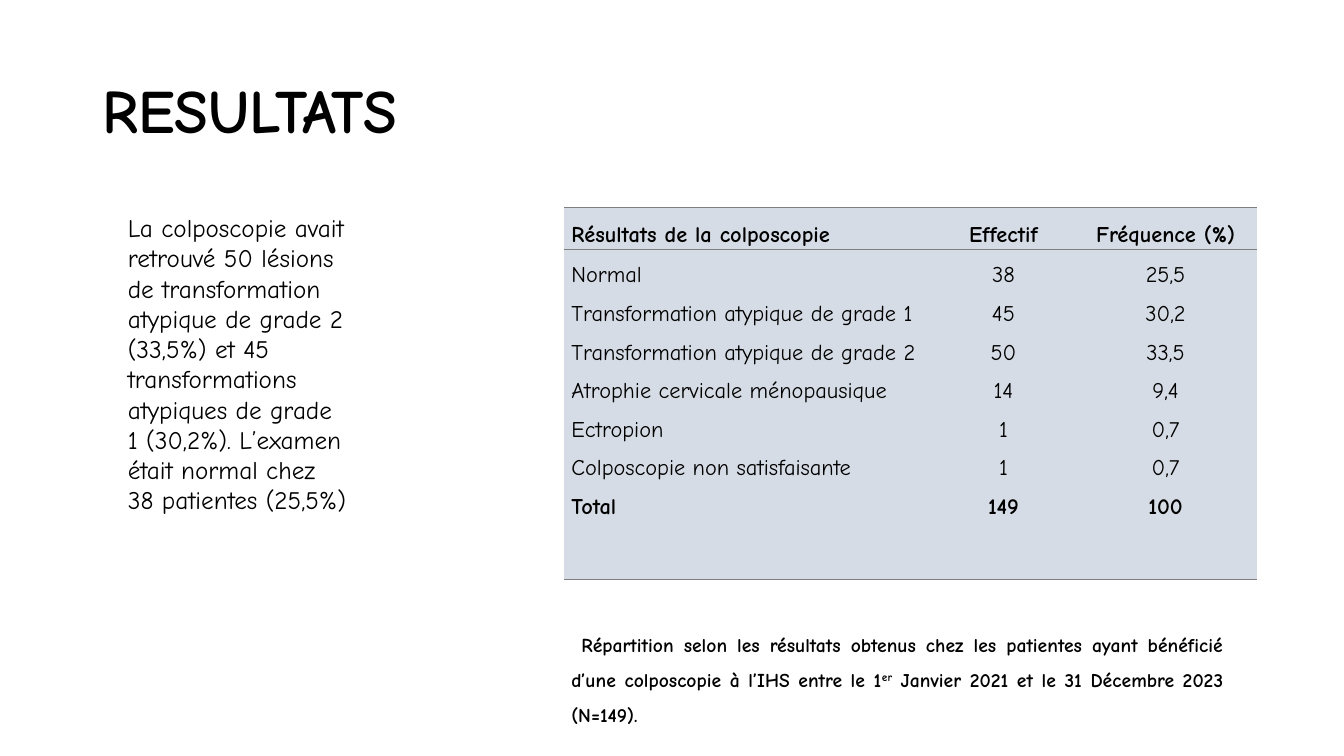
from dataclasses import dataclass

from lxml import etree
from pptx import Presentation
from pptx.dml.color import RGBColor
from pptx.enum import text as t
from pptx.oxml import ns
from pptx.util import Pt


@dataclass(frozen=True)
class Theme:
    font: str = "Comic Neue"
    ink: str = "000000"
    fill: str = "D6DCE5"
    rule: str = "7F7F7F"
    title: int = 44
    body: int = 18
    table: int = 16
    caption: int = 14


THEME = Theme()
LEFT, CENTER, JUSTIFY = t.PP_ALIGN.LEFT, t.PP_ALIGN.CENTER, t.PP_ALIGN.JUSTIFY

HEADERS = ["Résultats de la colposcopie", "Effectif", "Fréquence (%)"]
RESULTS = [
    ("Normal", "38", "25,5"),
    ("Transformation atypique de grade 1", "45", "30,2"),
    ("Transformation atypique de grade 2", "50", "33,5"),
    ("Atrophie cervicale ménopausique", "14", "9,4"),
    ("Ectropion", "1", "0,7"),
    ("Colposcopie non satisfaisante", "1", "0,7"),
    ("Total", "149", "100"),
]
SUMMARY = (
    "La colposcopie avait retrouvé 50 lésions de transformation atypique de "
    "grade 2 (33,5%) et 45 transformations atypiques de grade 1 (30,2%). "
    "L’examen était normal chez 38 patientes (25,5%)"
)
CAPTION = [
    " Répartition selon les résultats obtenus chez les patientes ayant "
    "bénéficié d’une colposcopie à l’IHS entre le 1",
    "er",
    " Janvier 2021 et le 31 Décembre 2023 (N=149).",
]


def write(p, content, *, size, bold=False, align=LEFT, spacing=1.0, raised=False):
    """Add one run to a paragraph and format both."""
    p.alignment, p.line_spacing = align, spacing
    r = p.add_run()
    r.text = content
    r.font.name, r.font.size, r.font.bold = THEME.font, Pt(size), bold
    r.font.color.rgb = RGBColor.from_string(THEME.ink)
    if raised:
        r._r.get_or_add_rPr().set("baseline", "30000")


def place(sp, box):
    sp.left, sp.top, sp.width, sp.height = (Pt(v) for v in box)


def add_title(s, box):
    sp = s.shapes.title
    place(sp, box)
    tf = sp.text_frame
    tf.auto_size = t.MSO_AUTO_SIZE.NONE
    tf.vertical_anchor = t.MSO_ANCHOR.MIDDLE
    write(tf.paragraphs[0], "RESULTATS", size=THEME.title, bold=True, spacing=0.9)


def add_text(s, box, runs, **fmt):
    """Add a wrapped text box; every second run is raised."""
    tf = s.shapes.add_textbox(*(Pt(v) for v in box)).text_frame
    tf.word_wrap = True
    for i, content in enumerate(runs):
        write(tf.paragraphs[0], content, raised=i % 2 == 1, **fmt)


def set_borders(cell):
    """Rule the top and bottom of a cell and leave its sides open."""
    tc_pr = cell._tc.get_or_add_tcPr()
    for side in "LRTB":
        ln = etree.SubElement(tc_pr, ns.qn(f"a:ln{side}"), w=str(Pt(1)))
        if side in "LR":
            etree.SubElement(ln, ns.qn("a:noFill"))
        else:
            solid = etree.SubElement(ln, ns.qn("a:solidFill"))
            etree.SubElement(solid, ns.qn("a:srgbClr"), val=THEME.rule)


def fill_cell(cell, lines, align, bold_line):
    set_borders(cell)
    cell.fill.solid()
    cell.fill.fore_color.rgb = RGBColor.from_string(THEME.fill)
    cell.margin_left = cell.margin_right = Pt(5)
    cell.margin_top = cell.margin_bottom = 0
    tf = cell.text_frame
    for i, line in enumerate(lines):
        p = tf.add_paragraph() if i else tf.paragraphs[0]
        write(p, line, size=THEME.table, bold=i == bold_line, align=align, spacing=1.5)


def add_results_table(s, box):
    """Add a header row above one tall row that lists each column's values."""
    x, y, w, h = box
    header_h = 30.2
    tbl = s.shapes.add_table(2, 3, Pt(x), Pt(y), Pt(w), Pt(h)).table
    tbl.first_row = tbl.horz_banding = False
    for row, height in zip(tbl.rows, (header_h, h - header_h)):
        row.height = Pt(height)
    shares = (0.532, 0.203, 0.265)
    for c, (header, values) in enumerate(zip(HEADERS, zip(*RESULTS))):
        tbl.columns[c].width = Pt(w * shares[c])
        align = CENTER if c else JUSTIFY
        fill_cell(tbl.cell(0, c), [header], align, 0)
        tbl.cell(0, c).vertical_anchor = t.MSO_ANCHOR.MIDDLE
        fill_cell(tbl.cell(1, c), values, align, len(values) - 1)


def build_results_slide(prs):
    s = prs.slides.add_slide(prs.slide_layouts.get_by_name("Title Only"))
    add_title(s, (66, 28.8, 828, 104.4))
    add_results_table(s, (403.2, 148.3, 495, 265.7))
    add_text(s, (401, 440, 480.2, 83.5), CAPTION,
             size=THEME.caption, bold=True, align=JUSTIFY, spacing=1.5)
    add_text(s, (84.2, 148.3, 171.4, 269.3), [SUMMARY], size=THEME.body)


def main():
    prs = Presentation()
    prs.slide_width, prs.slide_height = Pt(960), Pt(540)
    build_results_slide(prs)
    prs.save("out.pptx")


if __name__ == "__main__":
    main()
